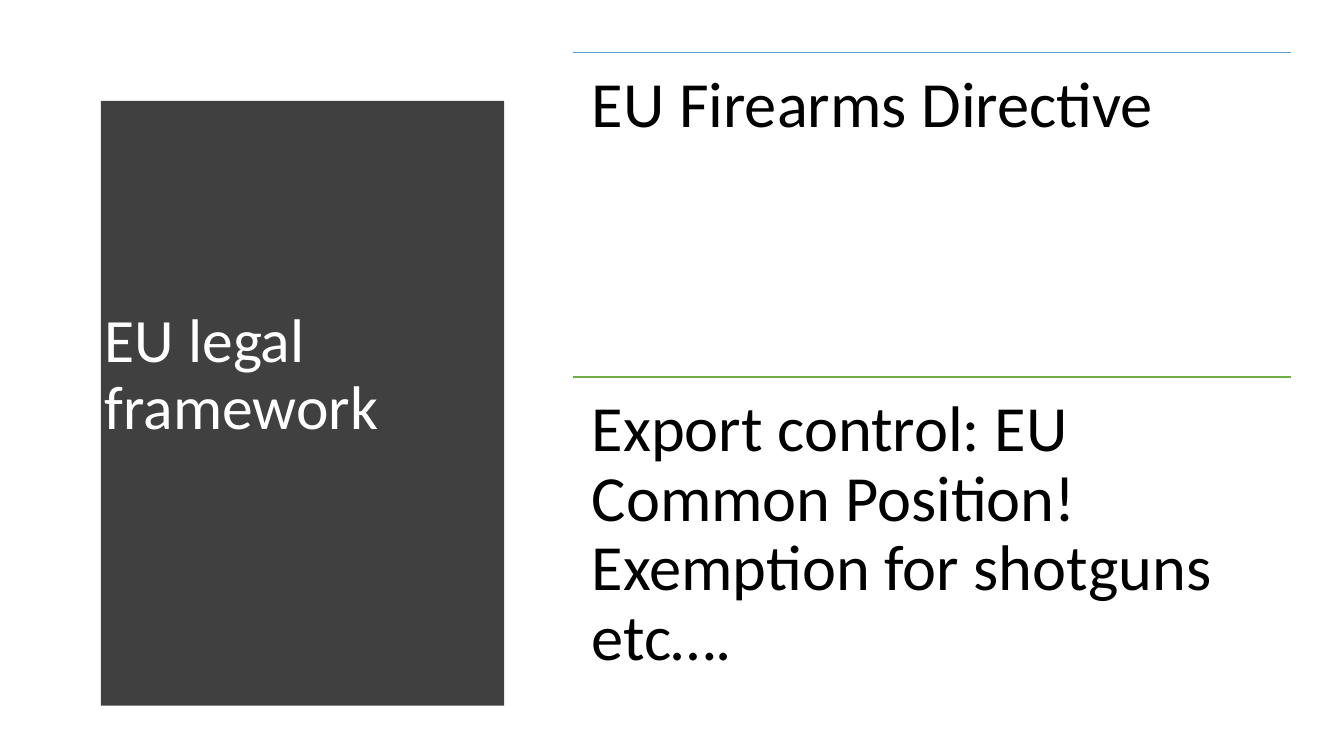
from lxml import etree
from pptx import Presentation
from pptx.dml.color import RGBColor
from pptx.enum.shapes import MSO_CONNECTOR
from pptx.enum.text import MSO_ANCHOR, MSO_AUTO_SIZE, PP_ALIGN
from pptx.oxml.ns import qn
from pptx.util import Inches, Pt

STRAIGHT = MSO_CONNECTOR.STRAIGHT
TOP, MIDDLE = MSO_ANCHOR.TOP, MSO_ANCHOR.MIDDLE
NO_FIT = MSO_AUTO_SIZE.NONE
LEFT = PP_ALIGN.LEFT

CHARCOAL = RGBColor(0x40, 0x40, 0x40)
WHITE = RGBColor(0xFF, 0xFF, 0xFF)
BLACK = RGBColor(0x00, 0x00, 0x00)
BLUE = RGBColor(0x5B, 0x9B, 0xD5)
GREEN = RGBColor(0x70, 0xAD, 0x47)

FONT = "Calibri"
SLIDE_WIDTH, SLIDE_HEIGHT = 13.33, 7.5
PANEL_BOX = (0.53, 0.52, 4.79, 6.44)
TOPICS_BOX = (5.68, 0.52, 7.12, 6.44)
BULGE = 0.24
CURVE_STEPS = 40
TOPICS = [
    ("EU Firearms Directive", BLUE),
    ("Export control: EU Common Position! Exemption for shotguns etc….", GREEN),
]


def write_text(shape, text, size, color, anchor, inset):
    """Fill a shape with one left-aligned, wrapped paragraph."""
    frame = shape.text_frame
    frame.text = text
    frame.word_wrap = True
    frame.auto_size = NO_FIT
    frame.vertical_anchor = anchor
    frame.margin_left = frame.margin_right = Inches(inset)
    frame.margin_top = frame.margin_bottom = Inches(inset)
    paragraph = frame.paragraphs[0]
    paragraph.alignment = LEFT
    paragraph.line_spacing = 0.9
    paragraph.font.name = FONT
    paragraph.font.size = Pt(size)
    paragraph.font.color.rgb = color


def add_title_panel(slide, box, text):
    """Draw the dark panel with a bulging right edge and put the title on it."""
    left, top, width, height = box
    edge = []
    for step in range(CURVE_STEPS + 1):
        share = step / CURVE_STEPS
        inward = BULGE * (2 * share - 1) ** 2
        edge.append((left + width - inward, top + share * height))
    builder = slide.shapes.build_freeform(left, top, scale=Inches(1))
    builder.add_line_segments(edge + [(left, top + height)], close=True)
    panel = builder.convert_to_shape()
    panel.shadow.inherit = False
    panel.fill.solid()
    panel.fill.fore_color.rgb = CHARCOAL
    panel.line.fill.background()

    title = slide.shapes.title
    title.left, title.top = Inches(left + 0.41), Inches(top + 0.59)
    title.width, title.height = Inches(width - 1.05), Inches(height - 1.2)
    write_text(title, text, 44, WHITE, MIDDLE, 0.1)
    title._element.addprevious(panel._element)


def add_topics(slide, box, topics):
    """Stack the topics in equal rows, each under a coloured rule."""
    left, top, width, height = box
    row_height = height / len(topics)
    for row, (text, color) in enumerate(topics):
        row_top = top + row * row_height
        rule = slide.shapes.add_connector(
            STRAIGHT, Inches(left), Inches(row_top), Inches(left + width), Inches(row_top)
        )
        rule.line.color.rgb = color
        rule.line.width = Pt(1)
        etree.SubElement(rule._element.spPr, qn("a:effectLst"))
        topic = slide.shapes.add_textbox(
            Inches(left), Inches(row_top), Inches(width), Inches(row_height)
        )
        write_text(topic, text, 46, BLACK, TOP, 0.19)


def main():
    """Build the slide and save it."""
    presentation = Presentation()
    presentation.slide_width = Inches(SLIDE_WIDTH)
    presentation.slide_height = Inches(SLIDE_HEIGHT)
    slide = presentation.slides.add_slide(presentation.slide_layouts.get_by_name("Title Only"))
    add_title_panel(slide, PANEL_BOX, "EU legal framework")
    add_topics(slide, TOPICS_BOX, TOPICS)
    presentation.save("out.pptx")


if __name__ == "__main__":
    main()
